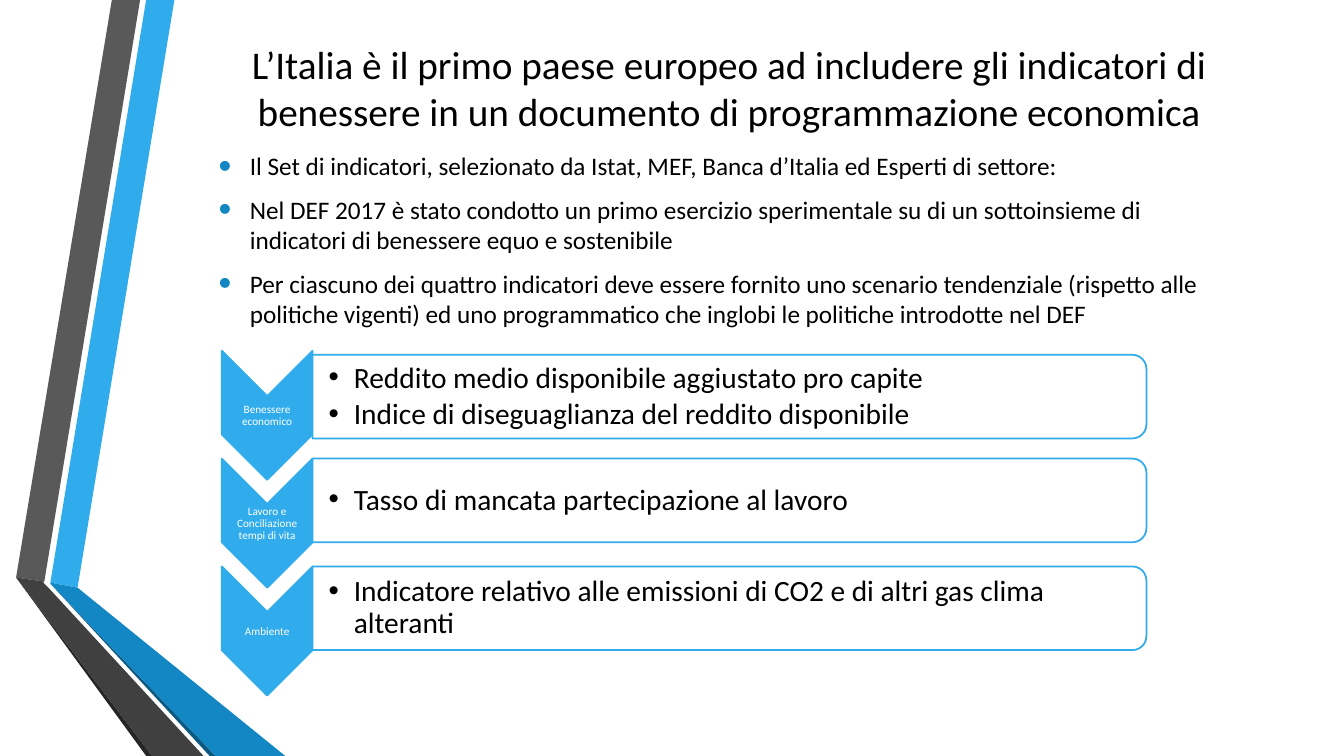
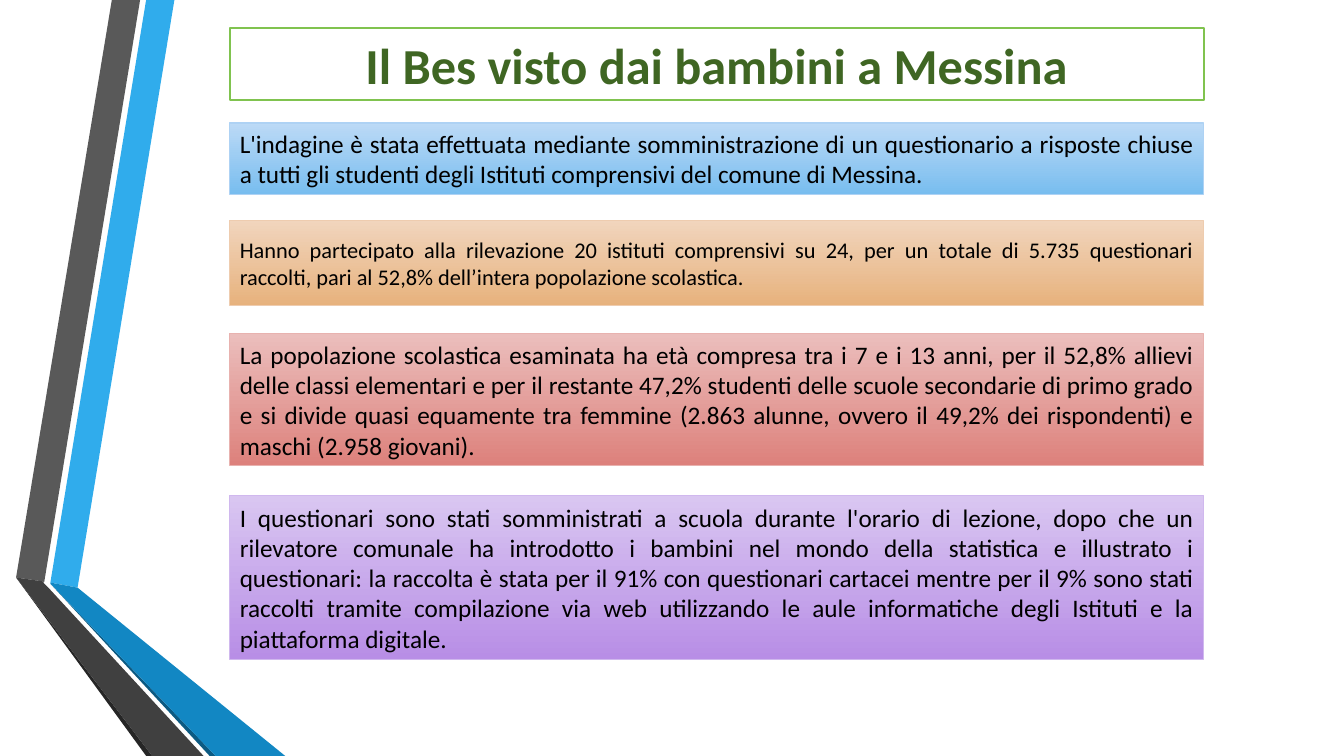
from dataclasses import dataclass
from typing import Any

from lxml.etree import SubElement as Sub
from pptx import Presentation
from pptx.dml.color import RGBColor
from pptx.enum.shapes import MSO_SHAPE as Kind
from pptx.enum.text import MSO_ANCHOR as Anchor, PP_ALIGN as Align
from pptx.oxml.ns import qn
from pptx.util import Inches, Pt

# Shared colours and font
SKY, BLUE, NAVY = "30ACEC", "1287C3", "0C5A82"
GREY, COAL, INK = "595959", "404040", "262626"
WHITE, BLACK = "FFFFFF", "000000"
LIME, MOSS = "80C34F", "3F6623"
FACE = "Calibri"

Box = tuple[float, float, float, float]
Point = tuple[float, float]


@dataclass
class Look:
    size: float
    color: str = BLACK
    bold: bool = False
    para: dict[str, Any] | None = None
    dot: str = ""
    scale: int = 100
    hang: float = 0


@dataclass
class Band:
    color: str
    points: list[Point]


@dataclass
class Step:
    label: str
    items: list[str]
    drop: float = 0


@dataclass
class Panel:
    top: float
    high: float
    light: str
    dark: str
    edge: str
    look: Look
    text: str


# Text styles
HEAD = Look(28, para={"alignment": Align.CENTER})
SIGN = Look(36, MOSS, True, {"alignment": Align.CENTER})
BODY = Look(18, para={"space_before": Pt(3.6), "space_after": Pt(6)},
            dot=BLUE, scale=145, hang=0.31)
TAG = Look(8, WHITE, para={"alignment": Align.CENTER, "line_spacing": 0.9})
ITEM = Look(21, para={"line_spacing": 0.9, "space_after": Pt(3.15)},
            dot=BLACK, hang=0.25)
FULL = Look(18, para={"alignment": Align.JUSTIFY})
NOTE = Look(16, para={"alignment": Align.JUSTIFY, "space_before": Pt(3.2),
                      "space_after": Pt(6)})

# Ribbon at the left of every slide
BANDS = [
    Band(SKY, [(0.5, 5.78), (0.77, 5.83), (1.73, 0), (1.45, 0)]),
    Band(GREY, [(1.39, 0), (1.11, 0), (0.16, 5.73), (0.44, 5.77)]),
    Band(INK, [(0.16, 5.73), (1.45, 7.5), (1.51, 7.5)]),
    Band(NAVY, [(0.5, 5.79), (2.08, 7.5), (2.14, 7.5)]),
    Band(BLUE, [(0.5, 5.79), (2.14, 7.5), (2.83, 7.5), (0.77, 5.83),
                (0.5, 5.78)]),
    Band(COAL, [(2.02, 7.5), (0.48, 5.83), (0.43, 5.78), (0.44, 5.77),
                (0.16, 5.73), (1.51, 7.5)]),
]

# Content
POINTS = [
    "Il Set di indicatori, selezionato da Istat, MEF, Banca d’Italia ed "
    "Esperti di settore:",
    "Nel DEF 2017 è stato condotto un primo esercizio sperimentale su di un "
    "sottoinsieme di indicatori di benessere equo e sostenibile",
    "Per ciascuno dei quattro indicatori deve essere fornito uno scenario "
    "tendenziale (rispetto alle politiche vigenti) ed uno programmatico che "
    "inglobi le politiche introdotte nel DEF",
]
STEPS = [
    Step("Benessere economico",
         ["Reddito medio disponibile aggiustato pro capite",
          "Indice di diseguaglianza del reddito disponibile"], 0.04),
    Step("Lavoro e Conciliazione tempi di vita",
         ["Tasso di mancata partecipazione al lavoro"]),
    Step("Ambiente",
         ["Indicatore relativo alle emissioni di CO2 e di altri gas clima "
          "alteranti"]),
]
PANELS = [
    Panel(1.22, 0.71, "BCDAF6", "78BDEF", "AED2F4", FULL,
          "L'indagine è stata effettuata mediante somministrazione di un "
          "questionario a risposte chiuse a tutti gli studenti degli Istituti "
          "comprensivi del comune di Messina."),
    Panel(2.19, 0.84, "F1D5BD", "E7B27D", "EECCAF", NOTE,
          "Hanno partecipato alla rilevazione 20 istituti comprensivi su 24, "
          "per un totale di 5.735 questionari raccolti, pari al 52,8% "
          "dell’intera popolazione scolastica."),
    Panel(3.31, 1.31, "EBBEBC", "DD817C", "E8B2AF", FULL,
          "La popolazione scolastica esaminata ha età compresa tra i 7 e i 13 "
          "anni, per il 52,8% allievi delle classi elementari e per il "
          "restante 47,2% studenti delle scuole secondarie di primo grado e "
          "si divide quasi equamente tra femmine (2.863 alunne, ovvero il "
          "49,2% dei rispondenti) e maschi (2.958 giovani)."),
    Panel(4.92, 1.62, "D9C6F1", "B88EE6", "D0B8EE", FULL,
          "I questionari sono stati somministrati a scuola durante l'orario "
          "di lezione, dopo che un rilevatore comunale ha introdotto i "
          "bambini nel mondo della statistica e illustrato i questionari: la "
          "raccolta è stata per il 91% con questionari cartacei mentre per il "
          "9% sono stati raccolti tramite compilazione via web utilizzando le "
          "aule informatiche degli Istituti e la piattaforma digitale."),
]


# Drawing helpers
def hue(code: str) -> RGBColor:
    return RGBColor.from_string(code)


def paint(shape, fill: str, line: str = "", width: float = 1.25) -> None:
    shape.shadow.inherit = False
    shape.fill.solid()
    shape.fill.fore_color.rgb = hue(fill)
    if line:
        shape.line.color.rgb = hue(line)
        shape.line.width = Pt(width)
    else:
        shape.line.fill.background()


def bullet(para, look: Look) -> None:
    prop = para._p.get_or_add_pPr()
    prop.set("marL", str(Inches(look.hang)))
    prop.set("indent", str(-Inches(look.hang)))
    Sub(Sub(prop, qn("a:buClr")), qn("a:srgbClr"), val=look.dot)
    Sub(prop, qn("a:buSzPct"), val=str(look.scale * 1000))
    Sub(prop, qn("a:buFont"), typeface="Arial")
    Sub(prop, qn("a:buChar"), char="•")


def write(frame, lines: list[str], look: Look) -> None:
    frame.word_wrap = True
    frame.vertical_anchor = Anchor.MIDDLE
    form = {"name": FACE, "size": Pt(look.size), "bold": look.bold}
    for i, line in enumerate(lines):
        para = frame.add_paragraph() if i else frame.paragraphs[0]
        for key, val in (look.para or {}).items():
            setattr(para, key, val)
        if look.dot:
            bullet(para, look)
        run = para.add_run()
        run.text = line
        for key, val in form.items():
            setattr(run.font, key, val)
        run.font.color.rgb = hue(look.color)


def label(slide, box: Box, lines: list[str], look: Look,
          pad: float | None = None, left: float | None = None) -> None:
    frame = slide.shapes.add_textbox(*map(Inches, box)).text_frame
    if pad is not None:
        for side in ("left", "top", "right", "bottom"):
            setattr(frame, f"margin_{side}", Inches(pad))
    if left is not None:
        frame.margin_left = Inches(left)
    write(frame, lines, look)


def block(slide, kind: Kind, box: Box, fill: str, line: str,
          turn: bool = False):
    """Draw a shape in the box as seen, also when turned a quarter."""
    x, y, w, h = box
    if turn:
        x, y, w, h = x + (w - h) / 2, y + (h - w) / 2, h, w
    shape = slide.shapes.add_shape(kind, *map(Inches, (x, y, w, h)))
    shape.rotation = 90 if turn else 0
    paint(shape, fill, line)
    return shape


def ribbon(slide) -> None:
    for band in BANDS:
        spots = [(Inches(x), Inches(y)) for x, y in band.points]
        pen = slide.shapes.build_freeform(*spots[0])
        pen.add_line_segments(spots[1:], close=True)
        paint(pen.convert_to_shape(), band.color)


def start(deck):
    slide = deck.slides.add_slide(deck.slide_layouts[6])
    ribbon(slide)
    return slide


# Slides
def goals(deck) -> None:
    slide = start(deck)
    label(slide, (1.75, 0.25, 10.96, 1.23),
          ["L’Italia è il primo paese europeo ad includere gli indicatori di "
           "benessere in un documento di programmazione economica"], HEAD)
    label(slide, (2.07, 1.34, 9.96, 2.07), POINTS, BODY)
    for i, step in enumerate(STEPS):
        top = 3.48 + 1.07 * i
        edge = top + step.drop
        block(slide, Kind.CHEVRON, (2.2, top, 0.9, 1.28), SKY, SKY, True)
        label(slide, (2.2, top + 0.45, 0.9, 0.39), [step.label], TAG, 0.01)
        block(slide, Kind.ROUND_2_SAME_RECTANGLE, (3.1, edge, 8.27, 0.83),
              WHITE, SKY, True)
        label(slide, (3.1, edge + 0.04, 8.23, 0.75), step.items, ITEM,
              0.01, 0.16)


def survey(deck) -> None:
    slide = start(deck)
    x, w = 2.28, 9.66
    sign = block(slide, Kind.RECTANGLE, (x, 0.28, w, 0.71), WHITE, LIME)
    write(sign.text_frame, ["Il Bes visto dai bambini a Messina"], SIGN)
    for panel in PANELS:
        shape = block(slide, Kind.RECTANGLE, (x, panel.top, w, panel.high),
                      panel.light, panel.edge)
        shape.line.width = Pt(0.75)
        shape.fill.gradient()
        shape.fill.gradient_angle = 270
        for stop, code in zip(shape.fill.gradient_stops,
                              (panel.light, panel.dark)):
            stop.color.rgb = hue(code)
        write(shape.text_frame, [panel.text], panel.look)


def main() -> None:
    deck = Presentation()
    deck.slide_width, deck.slide_height = Inches(13.33), Inches(7.5)
    goals(deck)
    survey(deck)
    deck.save("out.pptx")


if __name__ == "__main__":
    main()
